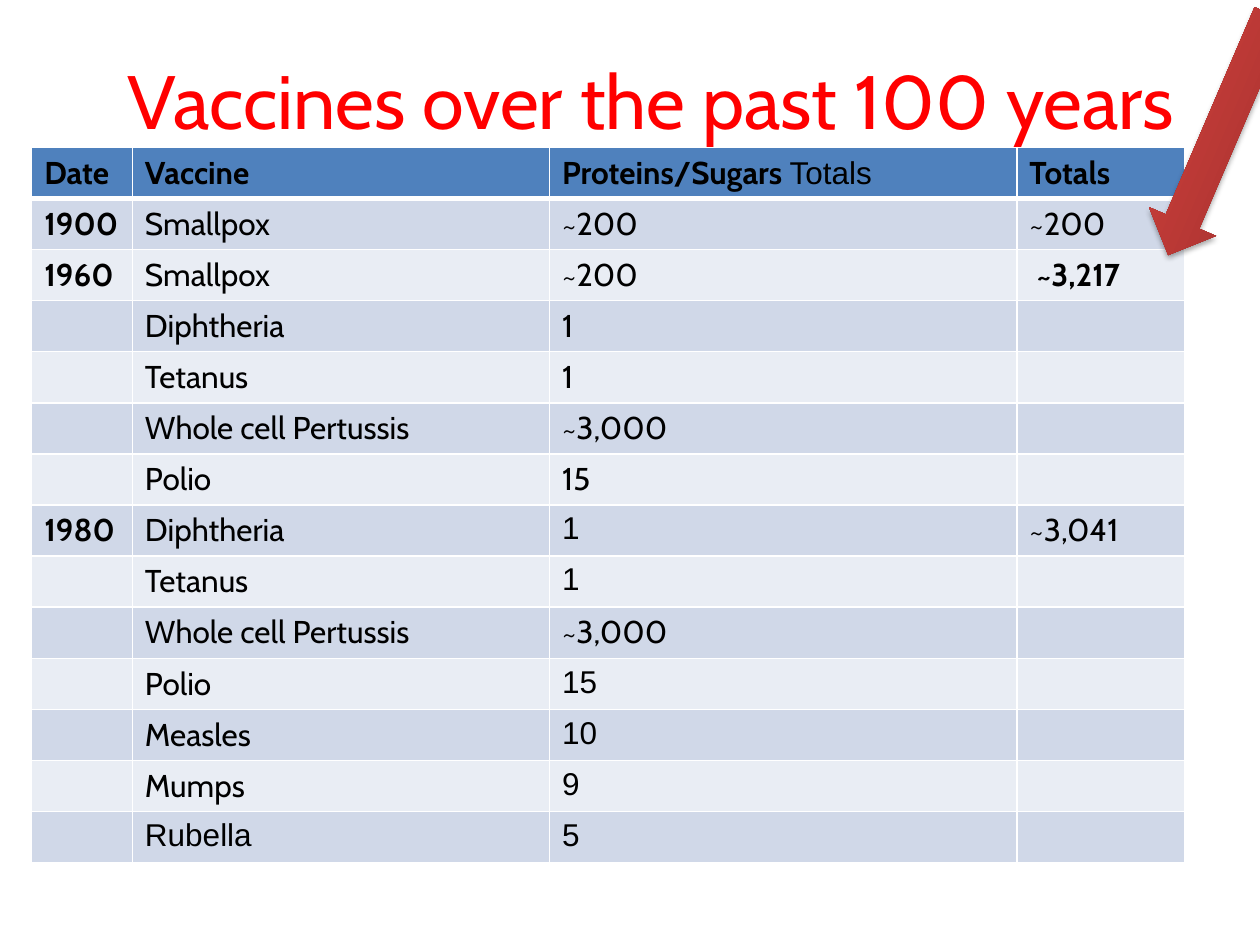
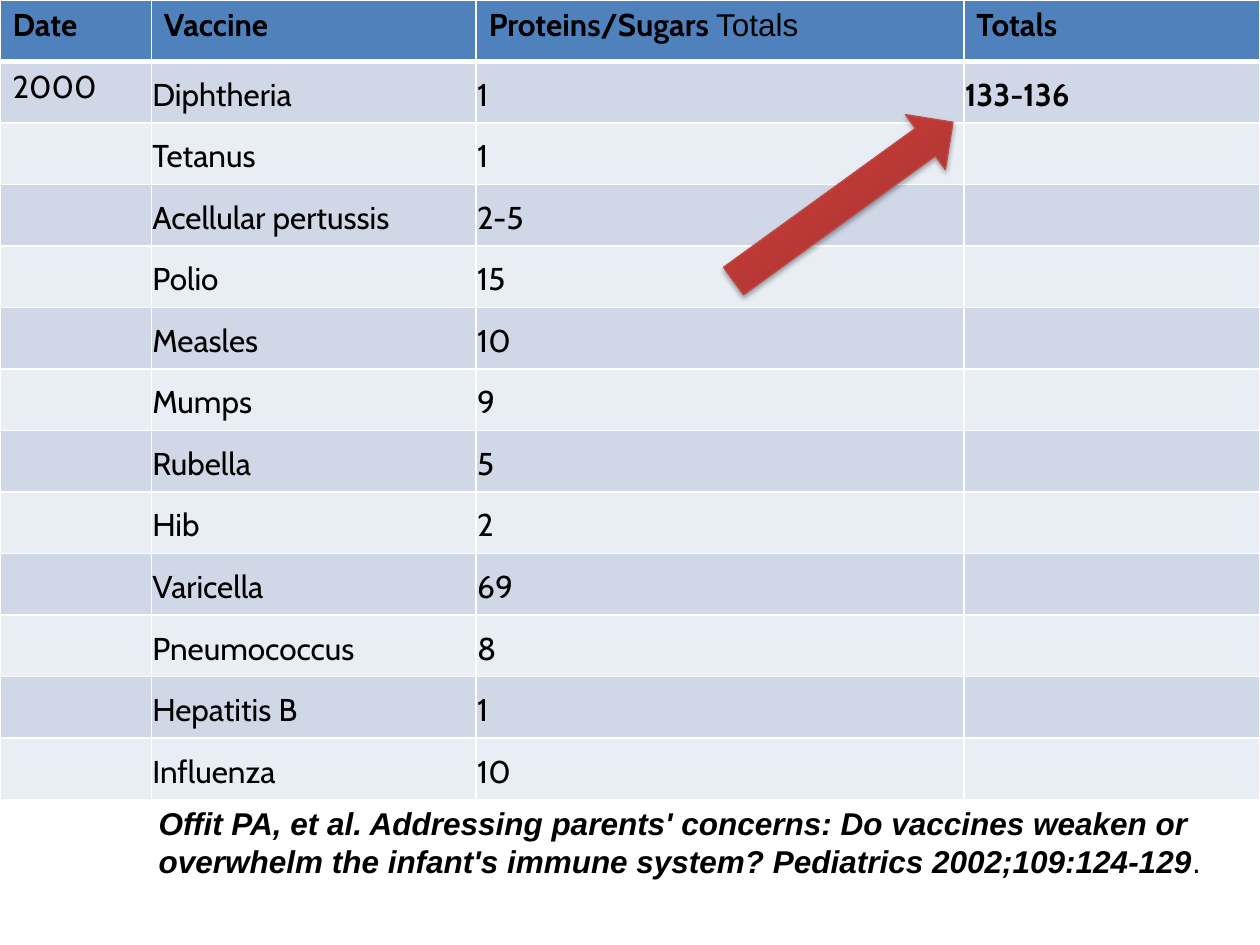
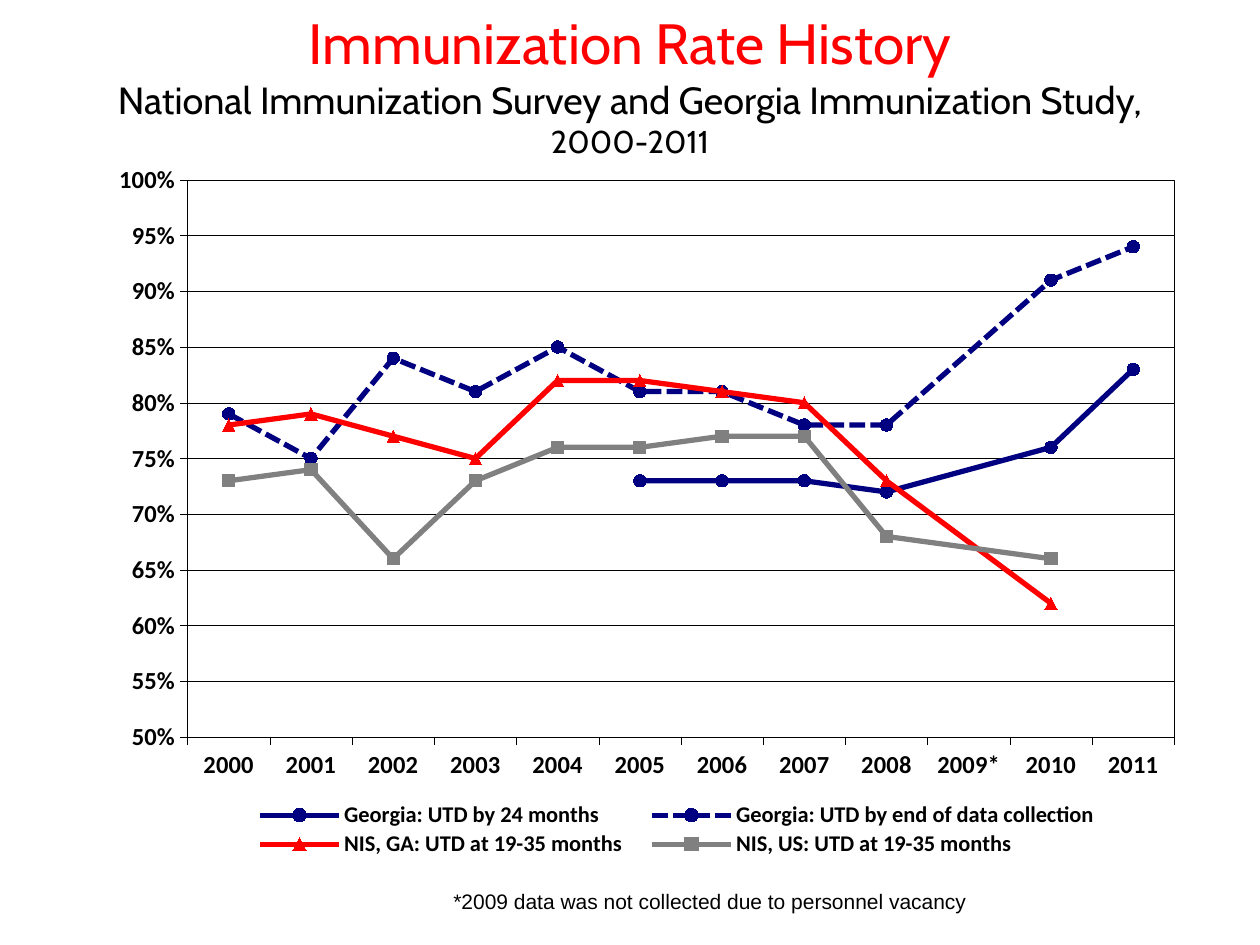
from copy import deepcopy
from dataclasses import dataclass
from typing import NamedTuple, Optional, Union

import pptx
import pptx.chart.data
import pptx.dml.color
import pptx.enum.chart
import pptx.enum.dml
import pptx.enum.shapes
import pptx.enum.text
import pptx.oxml
import pptx.oxml.ns
import pptx.util

Cm = pptx.util.Cm
Pt = pptx.util.Pt
RGBColor = pptx.dml.color.RGBColor
MSO_SHAPE = pptx.enum.shapes.MSO_SHAPE
MSO_ANCHOR = pptx.enum.text.MSO_ANCHOR
MARKER = pptx.enum.chart.XL_MARKER_STYLE

BLACK = RGBColor(0x00, 0x00, 0x00)
WHITE = RGBColor(0xFF, 0xFF, 0xFF)
RED = RGBColor(0xFF, 0x00, 0x00)
NAVY = RGBColor(0x00, 0x00, 0x80)
GRAY = RGBColor(0x80, 0x80, 0x80)
HEADER_BLUE = RGBColor(0x4F, 0x81, 0xBD)
BANDS = (RGBColor(0xD0, 0xD8, 0xE8), RGBColor(0xE9, 0xED, 0xF4))
ARROW_EDGE = RGBColor(0xBF, 0x4C, 0x48)
ARROW_STOPS = (
    (0.0, RGBColor(0x9C, 0x2F, 0x2D)),
    (0.8, RGBColor(0xCB, 0x3E, 0x3A)),
    (1.0, RGBColor(0xCE, 0x3B, 0x37)),
)

HEADING_FONT = "Cabin"
PLAIN_FONT = "Arial"
CHART_FONT = "Calibri"
HAIRLINE = Pt(0.25)
NS = pptx.oxml.ns.nsdecls("a")
NS_CHART = pptx.oxml.ns.nsdecls("c")


class Box(NamedTuple):
    """Left, top, width and height in centimetres."""
    left: float
    top: float
    width: float
    height: float

    def lengths(self) -> tuple:
        return tuple(Cm(v) for v in self)


class Span(NamedTuple):
    """A run; None leaves a property to its paragraph."""
    text: str
    font: Optional[str] = None
    size: Optional[float] = None
    color: Optional[RGBColor] = None
    bold: Optional[bool] = None
    italic: Optional[bool] = None


@dataclass(frozen=True)
class VaccineTable:
    box: Box
    columns: tuple
    row_height: float
    rows: tuple
    bold_dates: bool = True
    tight: bool = False


@dataclass(frozen=True)
class Arrow:
    preset: MSO_SHAPE
    box: Box
    rotation: float
    edge: Optional[RGBColor] = None


@dataclass(frozen=True)
class RateSeries:
    name: str
    values: tuple
    color: RGBColor
    marker: MARKER
    dashed: bool = False


def plain(text: str) -> Span:
    return Span(text, font=PLAIN_FONT)


HEADER = (
    (Span("Date", bold=True),),
    (Span("Vaccine", bold=True),),
    (Span("Proteins/Sugars ", bold=True), plain("Totals")),
    (Span("Totals", bold=True),),
)

TABLE_1900_1980 = VaccineTable(
    Box(0.64, 2.97, 23.24, 14.42), (2.03, 8.41, 9.42, 3.38), 1.03,
    (
        ("1900", "Smallpox", "~200", "~200"),
        ("1960", "Smallpox", "~200", Span("~3,217", bold=True)),
        ("", "Diphtheria", "1", ""),
        ("", "Tetanus", "1", ""),
        ("", "Whole cell Pertussis", "~3,000", ""),
        ("", "Polio", "15", ""),
        ("1980", "Diphtheria", plain("1"), "~3,041"),
        ("", "Tetanus", plain("1"), ""),
        ("", "Whole cell Pertussis", "~3,000", ""),
        ("", "Polio", plain("15"), ""),
        ("", "Measles", plain("10"), ""),
        ("", "Mumps", plain("9"), ""),
        ("", plain("Rubella"), plain("5"), ""),
    ),
)

TABLE_2000 = VaccineTable(
    Box(0, 0, 25.4, 16.12), (3.05, 6.55, 9.83, 5.97), 1.24,
    (
        ("2000", "Diphtheria", "1", Span("133-136", bold=True)),
        ("", "Tetanus", "1", ""),
        ("", "Acellular pertussis", "2-5", ""),
        ("", "Polio", "15", ""),
        ("", "Measles", "10", ""),
        ("", "Mumps", "9", ""),
        ("", "Rubella", "5", ""),
        ("", "Hib", "2", ""),
        ("", "Varicella", "69", ""),
        ("", "Pneumococcus", "8", ""),
        ("", "Hepatitis B", "1", ""),
        ("", "Influenza", "10", ""),
    ),
    bold_dates=False, tight=True,
)

ARROW_TO_3217 = Arrow(MSO_SHAPE.LEFT_ARROW, Box(21.95, 1.98, 5.28, 1.47), 293.2)
ARROW_TO_133 = Arrow(MSO_SHAPE.RIGHT_ARROW, Box(14.27, 3.38, 5.46, 1.37), 324.1,
                     ARROW_EDGE)

YEARS = [str(y) + ("*" if y == 2009 else "") for y in range(2000, 2012)]
RATES = (
    RateSeries("Georgia: UTD by 24 months",
               (None,) * 5 + (0.73, 0.73, 0.73, 0.72, None, 0.76, 0.83),
               NAVY, MARKER.CIRCLE),
    RateSeries("Georgia: UTD by end of data collection",
               (0.79, 0.75, 0.84, 0.81, 0.85, 0.81, 0.81, 0.78, 0.78, None, 0.91, 0.94),
               NAVY, MARKER.CIRCLE, dashed=True),
    RateSeries("NIS, GA: UTD at 19-35 months",
               (0.78, 0.79, 0.77, 0.75, 0.82, 0.82, 0.81, 0.8, 0.73, None, 0.62, None),
               RED, MARKER.TRIANGLE),
    RateSeries("NIS, US: UTD at 19-35 months",
               (0.73, 0.74, 0.66, 0.73, 0.76, 0.76, 0.77, 0.77, 0.68, None, 0.66, None),
               GRAY, MARKER.SQUARE),
)


def set_font(font, name=None, size=None, color=None, bold=None, italic=None) -> None:
    if name is not None:
        font.name = name
    if size is not None:
        font.size = Pt(size)
    if color is not None:
        font.color.rgb = color
    if bold is not None:
        font.bold = bold
    if italic is not None:
        font.italic = italic


def write(p, spans: tuple, font: str, size: float, color: RGBColor = BLACK,
          line_breaks: bool = False) -> None:
    """Fill a paragraph, optionally giving each span its own line."""
    set_font(p.font, font, size, color)
    for i, span in enumerate(spans):
        if i and line_breaks:
            p.add_line_break()
        r = p.add_run()
        r.text = span.text
        set_font(r.font, *span[1:])


def add_title(s, box: Box, spans: tuple, size: float, color: RGBColor) -> None:
    sp = s.shapes.title
    sp.left, sp.top, sp.width, sp.height = box.lengths()
    tf = sp.text_frame
    tf.word_wrap = True
    tf.auto_size = pptx.enum.text.MSO_AUTO_SIZE.NONE
    tf.vertical_anchor = MSO_ANCHOR.MIDDLE
    p = tf.paragraphs[0]
    p.alignment = pptx.enum.text.PP_ALIGN.CENTER
    write(p, spans, HEADING_FONT, size, color, line_breaks=True)


def add_note(s, box: Box, spans: tuple, size: float) -> None:
    tf = s.shapes.add_textbox(*box.lengths()).text_frame
    tf.word_wrap = True
    write(tf.paragraphs[0], spans, PLAIN_FONT, size)


def style_cell(cell, fill: RGBColor, bottom: float = 1) -> None:
    tc_pr = cell._tc.get_or_add_tcPr()
    for side, width in (("L", 1), ("R", 1), ("T", 1), ("B", bottom)):
        tc_pr.append(pptx.oxml.parse_xml(
            f'<a:ln{side} {NS} w="{Pt(width)}"><a:solidFill>'
            f'<a:srgbClr val="{WHITE}"/></a:solidFill></a:ln{side}>'))
    cell.fill.solid()
    cell.fill.fore_color.rgb = fill


def as_span(content: Union[str, Span], bold: bool) -> Span:
    return content if isinstance(content, Span) else Span(content, bold=bold or None)


def add_vaccine_table(s, spec: VaccineTable):
    table = s.shapes.add_table(len(spec.rows) + 1, len(spec.columns),
                               *spec.box.lengths()).table
    table.first_row = table.horz_banding = False
    for column, width in zip(table.columns, spec.columns):
        column.width = Cm(width)
    for row in table.rows:
        row.height = Cm(spec.row_height)
    for cell, spans in zip(table.rows[0].cells, HEADER):
        style_cell(cell, HEADER_BLUE, bottom=3)
        write(cell.text_frame.paragraphs[0], spans, HEADING_FONT, 18)
    for i, contents in enumerate(spec.rows):
        for j, content in enumerate(contents):
            cell = table.cell(i + 1, j)
            style_cell(cell, BANDS[i % 2])
            if not content:
                continue
            p = cell.text_frame.paragraphs[0]
            if spec.tight and j > 0:
                cell.vertical_anchor = MSO_ANCHOR.MIDDLE
                cell.margin_left = cell.margin_right = Cm(0.02)
                cell.margin_top = cell.margin_bottom = Cm(0.02)
                p.line_spacing = 1.15
            span = as_span(content, spec.bold_dates and j == 0)
            write(p, (span,), HEADING_FONT, 18)
    return table


def add_arrow(s, spec: Arrow) -> None:
    sp = s.shapes.add_shape(spec.preset, *spec.box.lengths())
    sp.rotation = spec.rotation
    sp.fill.gradient()
    sp.fill.gradient_angle = 90
    stops = sp._element.spPr.find(".//" + pptx.oxml.ns.qn("a:gsLst"))
    stops.append(deepcopy(stops[-1]))
    for stop, (position, color) in zip(sp.fill.gradient_stops, ARROW_STOPS):
        stop.position = position
        stop.color.rgb = color
    if spec.edge is None:
        sp.line.fill.background()
    else:
        sp.line.color.rgb = spec.edge
        sp.line.width = Pt(0.75)
    sp.shadow.inherit = False
    sp._element.spPr.find(pptx.oxml.ns.qn("a:effectLst")).append(pptx.oxml.parse_xml(
        f'<a:outerShdw {NS} blurRad="{Pt(3.1)}" dist="{Pt(1.8)}" dir="5400000" '
        f'rotWithShape="0"><a:srgbClr val="{BLACK}"><a:alpha val="35000"/>'
        '</a:srgbClr></a:outerShdw>'))


def set_layout(parent, after: Optional[str], box: tuple, inner: bool = False) -> None:
    """Place a chart part by fractions of the chart, after the named child."""
    for old in parent.findall(pptx.oxml.ns.qn("c:layout")):
        parent.remove(old)
    target = '<c:layoutTarget val="inner"/>' if inner else ""
    modes = '<c:xMode val="edge"/><c:yMode val="edge"/>'
    sizes = "".join(f'<c:{k} val="{v}"/>' for k, v in zip("xywh", box))
    layout = pptx.oxml.parse_xml(
        f'<c:layout {NS_CHART}><c:manualLayout>{target}{modes}{sizes}'
        '</c:manualLayout></c:layout>')
    if after is None:
        parent.insert(0, layout)
    else:
        parent.find(pptx.oxml.ns.qn(after)).addnext(layout)


def style_line(line, color: RGBColor, width) -> None:
    line.color.rgb = color
    line.width = width


def add_rate_chart(s, box: Box) -> None:
    data = pptx.chart.data.CategoryChartData(number_format="0%")
    data.categories = YEARS
    for rate in RATES:
        data.add_series(rate.name, rate.values)
    chart = s.shapes.add_chart(pptx.enum.chart.XL_CHART_TYPE.LINE_MARKERS,
                               *box.lengths(), data).chart
    chart.has_title = False
    set_font(chart.font, CHART_FONT, 14, BLACK, True)

    for axis in (chart.category_axis, chart.value_axis):
        set_font(axis.tick_labels.font, CHART_FONT, 14, BLACK, True)
        style_line(axis.format.line, BLACK, HAIRLINE)
        axis.major_tick_mark = pptx.enum.chart.XL_TICK_MARK.OUTSIDE
    axis = chart.value_axis
    axis.minimum_scale, axis.maximum_scale, axis.major_unit = 0.5, 1, 0.05
    axis.tick_labels.number_format = "0%"
    axis.tick_labels.number_format_is_linked = False
    axis.has_major_gridlines = True
    style_line(axis.major_gridlines.format.line, BLACK, HAIRLINE)

    chart.plots[0].vary_by_categories = False
    for series, rate in zip(chart.plots[0].series, RATES):
        series.smooth = False
        style_line(series.format.line, rate.color, Pt(3))
        if rate.dashed:
            series.format.line.dash_style = pptx.enum.dml.MSO_LINE.SQUARE_DOT
        marker = series.marker
        marker.style, marker.size = rate.marker, 7
        marker.format.fill.solid()
        marker.format.fill.fore_color.rgb = rate.color
        marker.format.line.color.rgb = rate.color

    chart.has_legend = True
    legend = chart.legend
    legend.position = pptx.enum.chart.XL_LEGEND_POSITION.BOTTOM
    legend.include_in_layout = False
    set_font(legend.font, CHART_FONT, 12.8, BLACK, True)
    set_layout(legend._element, "c:legendPos", (0.13, 0.89, 0.8, 0.08))

    chart_xml = chart._chartSpace.chart
    plot_area = chart_xml.plotArea
    set_layout(plot_area, None, (0.085, 0.059, 0.898, 0.747), inner=True)
    plot_area.append(pptx.oxml.parse_xml(
        f'<c:spPr {NS_CHART} {NS}><a:solidFill><a:srgbClr val="{WHITE}"/></a:solidFill>'
        f'<a:ln w="{HAIRLINE}"><a:solidFill><a:srgbClr val="{BLACK}"/></a:solidFill>'
        '</a:ln></c:spPr>'))
    chart_xml.find(pptx.oxml.ns.qn("c:dispBlanksAs")).set("val", "span")


def main() -> None:
    prs = pptx.Presentation()
    prs.slide_width, prs.slide_height = Cm(25.4), Cm(19.05)
    title_only, blank = prs.slide_layouts[5], prs.slide_layouts[6]

    s = prs.slides.add_slide(title_only)
    add_title(s, Box(0.84, 0.64, 24.56, 2.74),
              (Span("Vaccines over the past 100 years"),), 43.2, RED)
    table = add_vaccine_table(s, TABLE_1900_1980)
    table.cell(2, 3).margin_left = Cm(0.4)
    add_arrow(s, ARROW_TO_3217)

    s = prs.slides.add_slide(blank)
    add_vaccine_table(s, TABLE_2000)
    add_note(s, Box(2.95, 16.08, 22.45, 1.8), (
        Span("Offit PA, et al. Addressing parents' concerns: Do vaccines weaken or "
             "overwhelm the infant's immune system? Pediatrics 2002;109:124-129",
             bold=True, italic=True),
        Span("."),
    ), 18)
    add_arrow(s, ARROW_TO_133)

    s = prs.slides.add_slide(title_only)
    add_title(s, Box(0, 0.1, 25.4, 3.18), (
        Span("Immunization Rate History", size=32.4, color=RED),
        Span("National Immunization Survey and Georgia Immunization Study,", size=21.6),
        Span("2000-2011"),
    ), 18, BLACK)
    add_note(s, Box(8.89, 17.78, 11.3, 0.76),
             (Span("*2009 data was not collected due to personnel vacancy"),), 12)
    add_rate_chart(s, Box(1.9, 2.74, 22.15, 15.04))

    prs.save("out.pptx")


if __name__ == "__main__":
    main()
